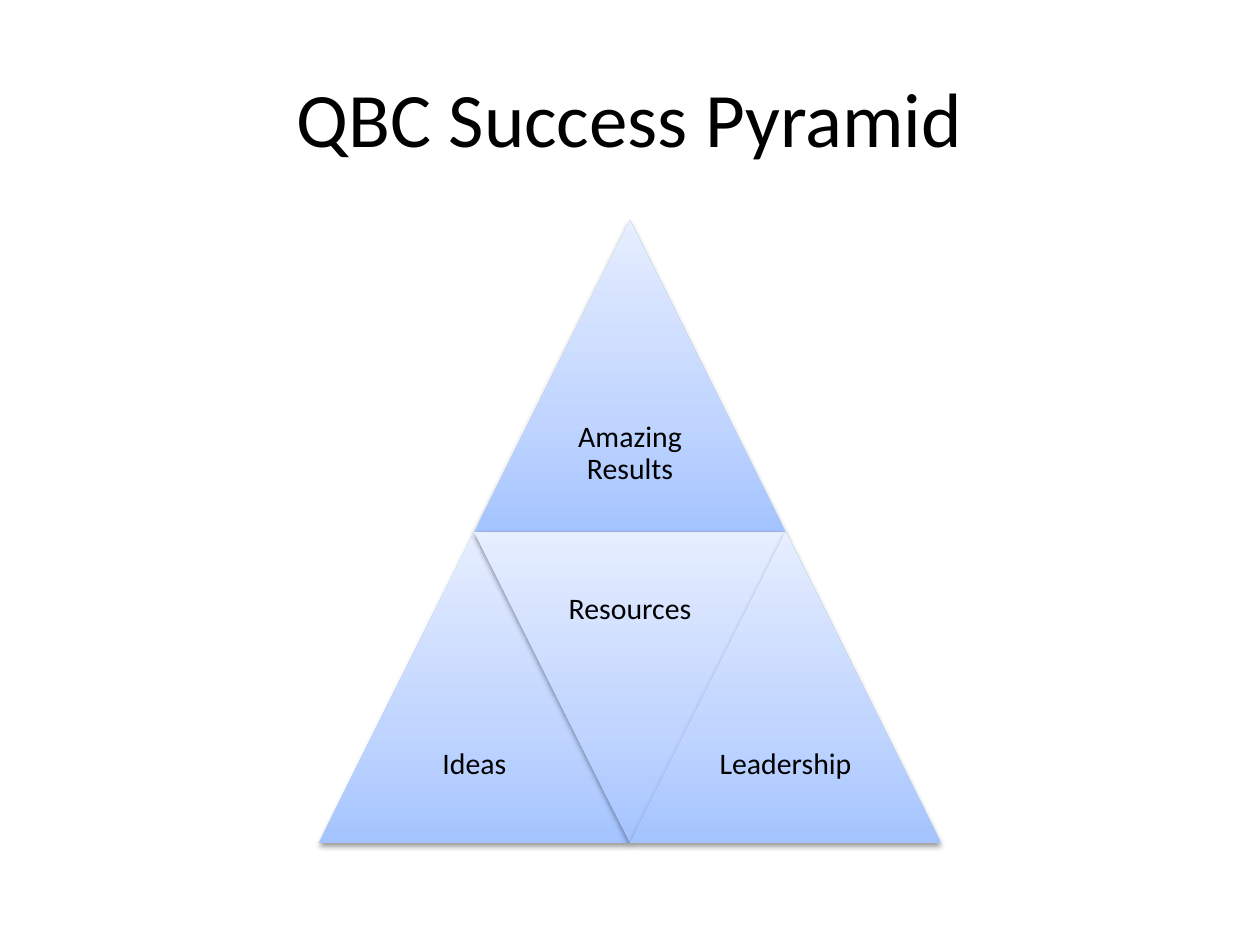
from dataclasses import dataclass

from lxml import etree
from pptx import Presentation
from pptx.dml.color import RGBColor
from pptx.enum.shapes import MSO_SHAPE
from pptx.enum.text import MSO_ANCHOR, PP_ALIGN
from pptx.oxml.ns import qn
from pptx.util import Inches, Pt

TRIANGLE = MSO_SHAPE.ISOSCELES_TRIANGLE
CENTER = PP_ALIGN.CENTER
MIDDLE = MSO_ANCHOR.MIDDLE
TITLE_ONLY = 5


@dataclass(frozen=True)
class Theme:
    font: str = "Calibri"
    ink: str = "000000"
    gradient: tuple = ((0, "A4C4FF"), (35, "BFD4FF"), (100, "E6EEFF"))
    title_size: float = 44
    label_size: float = 17


class PyramidSlide:
    def __init__(self, deck, theme):
        self.theme = theme
        self.slide = deck.slides.add_slide(deck.slide_layouts[TITLE_ONLY])

    def set_text(self, frame, text, size):
        frame.text = text
        frame.word_wrap = True
        frame.vertical_anchor = MIDDLE
        para = frame.paragraphs[0]
        para.alignment = CENTER
        for span in para.runs:
            span.font.name = self.theme.font
            span.font.size = Pt(size)
            span.font.color.rgb = RGBColor.from_string(self.theme.ink)
        return para

    def title(self, text, left, top, width, height):
        box = self.slide.shapes.title
        box.left, box.top = Inches(left), Inches(top)
        box.width, box.height = Inches(width), Inches(height)
        self.set_text(box.text_frame, text, self.theme.title_size)

    def triangle(self, left, top, side, inverted=False):
        shape = self.slide.shapes.add_shape(
            TRIANGLE, Inches(left), Inches(top), Inches(side), Inches(side)
        )
        shape.rotation = 180 if inverted else 0
        shape.line.fill.background()
        shape.fill.gradient()
        gradient = shape.element.spPr.find(qn("a:gradFill"))
        gradient.set("rotWithShape", "0")
        stops = gradient.find(qn("a:gsLst"))
        for stop in list(stops):
            stops.remove(stop)
        for position, color in self.theme.gradient:
            stop = etree.SubElement(stops, qn("a:gs"), pos=str(position * 1000))
            etree.SubElement(stop, qn("a:srgbClr"), val=color)
        gradient.find(qn("a:lin")).set("ang", str(270 * 60000))
        self.shadow(shape)

    def shadow(self, shape):
        shape.shadow.inherit = False
        effects = shape.element.spPr.find(qn("a:effectLst"))
        outer = etree.SubElement(
            effects, qn("a:outerShdw"), blurRad=str(Pt(3.1)),
            dist=str(Pt(1.6)), dir=str(90 * 60000), rotWithShape="0",
        )
        color = etree.SubElement(outer, qn("a:srgbClr"), val=self.theme.ink)
        etree.SubElement(color, qn("a:alpha"), val="38000")

    def label(self, text, left, top, side):
        box = self.slide.shapes.add_textbox(
            Inches(left), Inches(top), Inches(side), Inches(side)
        )
        frame = box.text_frame
        frame.margin_left = frame.margin_right = Inches(0.07)
        frame.margin_top = frame.margin_bottom = Inches(0.07)
        para = self.set_text(frame, text, self.theme.label_size)
        para.line_spacing = 0.9

    def block(self, text, center, top, side, inverted=False):
        half = side / 2
        self.triangle(center - half, top, side, inverted)
        label_top = top if inverted else top + half
        self.label(text, center - half / 2, label_top, half)


def main():
    deck = Presentation()
    deck.slide_width, deck.slide_height = Inches(10), Inches(7.5)
    page = PyramidSlide(deck, Theme())
    page.title("QBC Success Pyramid", 0.5, 0.3, 9, 1.25)

    center, top, side = 5, 1.75, 2.47
    blocks = (
        ("Amazing Results", 0, 0, False),
        ("Ideas", -0.5, 1, False),
        ("Resources", 0, 1, True),
        ("Leadership", 0.5, 1, False),
    )
    for text, column, row, inverted in blocks:
        page.block(text, center + column * side, top + row * side, side, inverted)
    deck.save("out.pptx")


if __name__ == "__main__":
    main()
